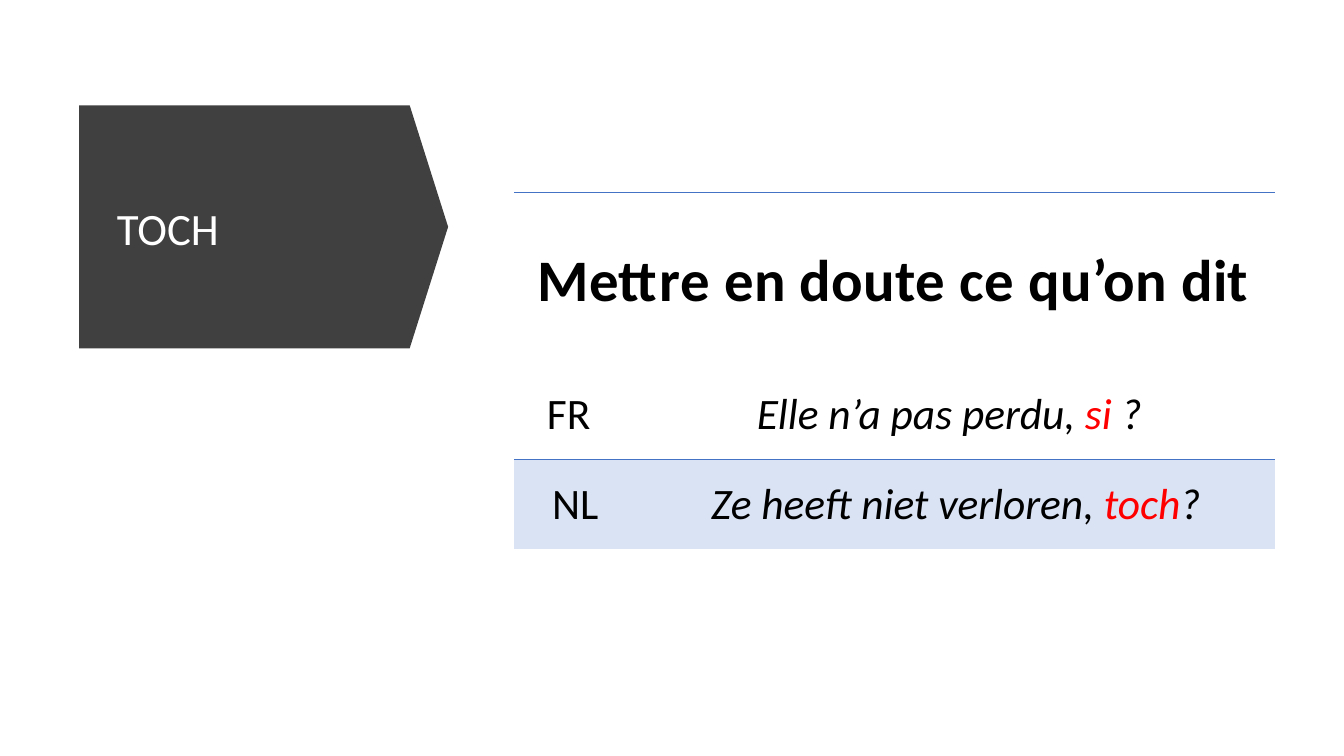
from dataclasses import dataclass

from lxml import etree
from pptx import Presentation
from pptx.dml.color import RGBColor
from pptx.enum.shapes import MSO_SHAPE
from pptx.enum.text import MSO_ANCHOR, PP_ALIGN
from pptx.oxml.ns import qn
from pptx.table import Table, _Cell
from pptx.text.text import TextFrame
from pptx.util import Pt

EMU_PER_PX = 9144
FONT = "Calibri"
NO_TABLE_STYLE = "{2D5ABB26-0587-4C30-8999-92F81FD0307C}"

DOWN_ARROW = MSO_SHAPE.DOWN_ARROW
MIDDLE = MSO_ANCHOR.MIDDLE
LEFT, CENTER = PP_ALIGN.LEFT, PP_ALIGN.CENTER

WHITE = RGBColor(0xFF, 0xFF, 0xFF)
BLACK = RGBColor(0x00, 0x00, 0x00)
CHARCOAL = RGBColor(0x40, 0x40, 0x40)
RED = RGBColor(0xFF, 0x00, 0x00)
BLUE = RGBColor(0x44, 0x72, 0xC4)
PALE_BLUE = RGBColor(0xDA, 0xE3, 0xF3)

COLUMN_WIDTHS = (134, 621)
ROW_HEIGHTS = (176, 89, 89)


@dataclass(frozen=True)
class Example:
    language: str
    start: str
    keyword: str
    end: str
    left_margin: int
    fill: RGBColor | None = None
    top_border: float | None = None
    bottom_border: float | None = None


EXAMPLES = (
    Example("FR", "Elle n’a pas perdu, ", "si", " ?", 0, bottom_border=0.75),
    Example("NL", "Ze heeft niet verloren, ", "toch", "?", 13,
            fill=PALE_BLUE, top_border=0.75),
)


def px(length: int) -> int:
    return length * EMU_PER_PX


def write(frame: TextFrame, *parts: tuple[str, RGBColor], size: float,
          bold: bool = False, italic: bool = False, align: PP_ALIGN = CENTER,
          line_spacing: float = 1.0, tracking: int = 0) -> None:
    """Fill the first paragraph with coloured runs; tracking is in 1/100 pt."""
    frame.word_wrap = True
    paragraph = frame.paragraphs[0]
    paragraph.alignment = align
    paragraph.line_spacing = line_spacing
    for text, color in parts:
        run = paragraph.add_run()
        run.text = text
        run.font.name = FONT
        run.font.size = Pt(size)
        run.font.bold = bold
        run.font.italic = italic
        run.font.color.rgb = color
        if tracking:
            run.font._element.set("spc", str(tracking))


def add_border(cell: _Cell, side: str, width: float) -> None:
    """Draw a blue border; side is T or B, and T must come before B."""
    properties = cell._tc.get_or_add_tcPr()
    line = etree.SubElement(properties, qn(f"a:ln{side}"), w=str(Pt(width)))
    fill = etree.SubElement(line, qn("a:solidFill"))
    etree.SubElement(fill, qn("a:srgbClr"), val=str(BLUE))


def format_cell(cell: _Cell, left: int, right: int, fill: RGBColor | None = None,
                top_border: float | None = None,
                bottom_border: float | None = None) -> None:
    cell.vertical_anchor = MIDDLE
    cell.margin_left, cell.margin_right = px(left), px(right)
    cell.margin_top = cell.margin_bottom = px(13)
    if top_border:
        add_border(cell, "T", top_border)
    if bottom_border:
        add_border(cell, "B", bottom_border)
    if fill is None:
        cell.fill.background()
    else:
        cell.fill.solid()
        cell.fill.fore_color.rgb = fill


def add_title(shapes) -> None:
    arrow = shapes.add_shape(DOWN_ARROW, px(141), px(42), px(241), px(366))
    arrow.rotation = 270
    arrow.adjustments[0] = 1
    arrow.adjustments[1] = 0.158
    arrow.shadow.inherit = False
    arrow.fill.solid()
    arrow.fill.fore_color.rgb = CHARCOAL
    arrow.line.fill.background()

    title = shapes.add_textbox(px(106), px(132), px(292), px(195))
    title.text_frame.vertical_anchor = MIDDLE
    write(title.text_frame, ("TOCH", WHITE), size=32, align=LEFT, line_spacing=0.9)


def add_plain_table(shapes) -> Table:
    frame = shapes.add_table(len(ROW_HEIGHTS), len(COLUMN_WIDTHS), px(510), px(191),
                             px(sum(COLUMN_WIDTHS)), px(sum(ROW_HEIGHTS)))
    table = frame.table
    table.first_row = table.horz_banding = False
    table._tbl.tblPr.find(qn("a:tableStyleId")).text = NO_TABLE_STYLE
    for column, width in zip(table.columns, COLUMN_WIDTHS):
        column.width = px(width)
    for row, height in zip(table.rows, ROW_HEIGHTS):
        row.height = px(height)
    return table


def add_examples(shapes) -> None:
    table = add_plain_table(shapes)
    heading = table.cell(0, 0)
    heading.merge(table.cell(0, 1))
    for cell in table.rows[0].cells:
        format_cell(cell, 0, 3, top_border=1.5)
    write(heading.text_frame, ("Mettre en doute ce qu’on dit", BLACK),
          size=42, bold=True, tracking=30)

    for row, example in enumerate(EXAMPLES, start=1):
        language, sentence = table.cell(row, 0), table.cell(row, 1)
        for cell in (language, sentence):
            format_cell(cell, example.left_margin, 26, example.fill,
                        example.top_border, example.bottom_border)
        write(language.text_frame, (example.language, BLACK), size=31)
        write(sentence.text_frame, (example.start, BLACK), (example.keyword, RED),
              (example.end, BLACK), size=31, italic=True)


def main() -> None:
    presentation = Presentation()
    presentation.slide_width, presentation.slide_height = px(1333), px(750)
    slide = presentation.slides.add_slide(presentation.slide_layouts[6])
    add_title(slide.shapes)
    add_examples(slide.shapes)
    presentation.save("out.pptx")


if __name__ == "__main__":
    main()
